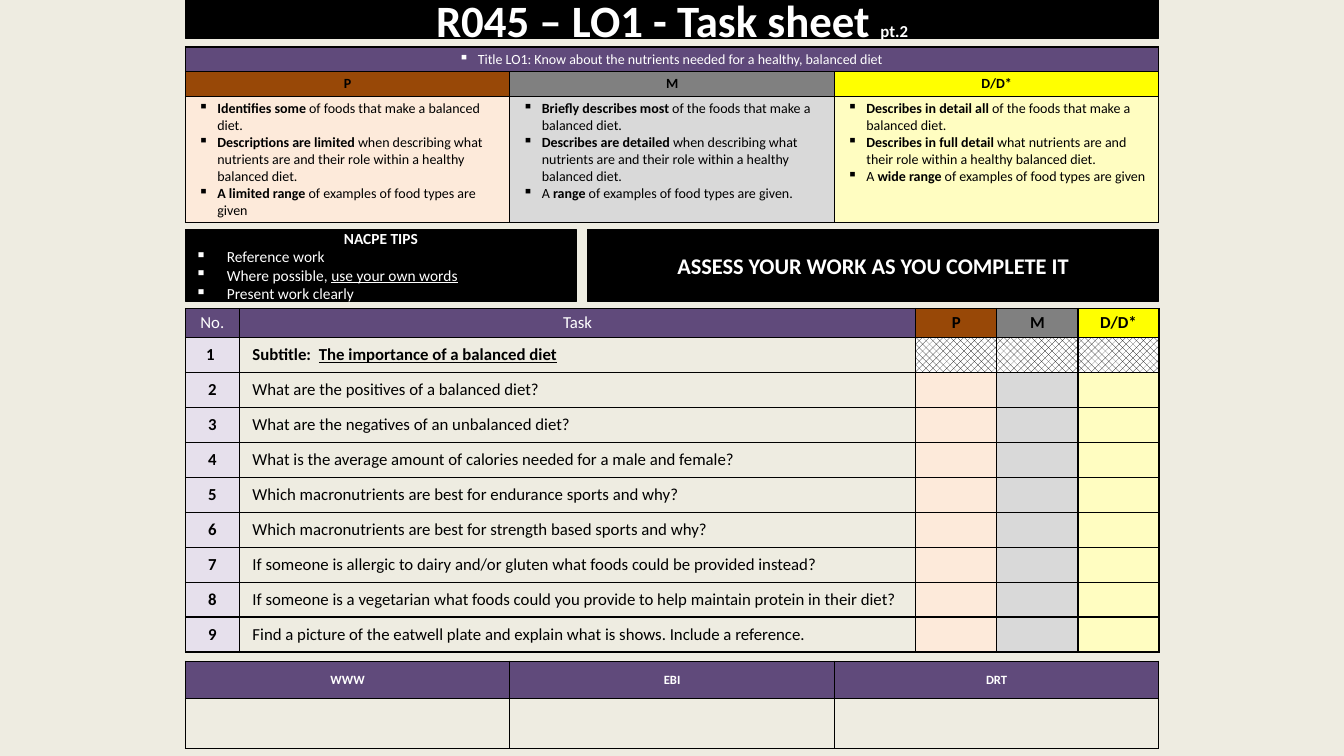
from lxml import etree
from pptx import Presentation
from pptx.dml.color import RGBColor
from pptx.enum.dml import MSO_PATTERN
from pptx.enum.shapes import MSO_SHAPE
from pptx.enum.text import MSO_ANCHOR, PP_ALIGN
from pptx.oxml.ns import qn
from pptx.util import Pt

LEFT, CENTER = PP_ALIGN.LEFT, PP_ALIGN.CENTER
TOP, MIDDLE = MSO_ANCHOR.TOP, MSO_ANCHOR.MIDDLE
RECTANGLE = MSO_SHAPE.RECTANGLE
HATCH = MSO_PATTERN.PERCENT_50

FONT = "Calibri"
COLORS = {
    "page": "EEECE1", "black": "000000", "white": "FFFFFF",
    "purple": "604A7B", "lilac": "E6E0EC",
    "brown": "984807", "gray": "808080", "yellow": "FFFF00",
    "peach": "FDEADA", "silver": "D9D9D9", "cream": "FFFDC1",
}
LEFT_EDGE = 132.4
GRADES = [("P", "brown", "peach"), ("M", "gray", "silver"), ("D/D*", "yellow", "cream")]
THIRDS = [231.8] * 3

# Each criterion is a plain lead, a bold phrase and a plain ending.
CRITERIA = [
    [("", "Identifies some ", "of foods that make a balanced diet."),
     ("", "Descriptions are limited ",
      "when describing what nutrients are and their role within a healthy balanced diet."),
     ("", "A limited range ", "of examples of food types are given")],
    [("", "Briefly describes most ", "of the foods that make a balanced diet."),
     ("", "Describes are detailed ",
      "when describing what nutrients are and their role within a healthy balanced diet."),
     ("A ", "range ", "of examples of food types are given.")],
    [("", "Describes in detail all ", "of the foods that make a balanced diet."),
     ("", "Describes in full detail ",
      "what nutrients are and their role within a healthy balanced diet."),
     ("A ", "wide range ", "of examples of food types are given")],
]
QUESTIONS = [
    "What are the positives of a balanced diet?",
    "What are the negatives of an unbalanced diet?",
    "What is the average amount of calories needed for a male and female?",
    "Which macronutrients are best for endurance sports and why?",
    "Which macronutrients are best for strength based sports and why?",
    "If someone is allergic to dairy and/or gluten what foods could be provided instead?",
    "If someone is a vegetarian what foods could you provide to help maintain protein in their diet?",
    "Find a picture of the eatwell plate and explain what is shows. Include a reference.",
]


def rgb(name):
    return RGBColor.from_string(COLORS[name])


def paint(fill, color):
    fill.solid()
    fill.fore_color.rgb = rgb(color)


def write(para, text, size, color="black", bold=None, align=LEFT, indent=0):
    """Fill a paragraph; an indent above zero gives it a hanging square bullet."""
    para.alignment = align
    font = para.font
    font.name, font.size, font.bold = FONT, Pt(size), bold
    font.color.rgb = rgb(color)
    if text:
        add_span(para, text)
    if indent:
        props = para._p.get_or_add_pPr()
        props.set("marL", str(Pt(indent)))
        props.set("indent", str(-Pt(indent)))
        bullet = etree.Element(qn("a:buChar"), char="▪")
        props.insert(0, bullet)


def add_span(para, text, bold=None, underline=None, size=None):
    span = para.add_run()
    span.text = text
    span.font.bold, span.font.underline = bold, underline
    if size:
        span.font.size = Pt(size)


def add_bar(page, left, top, width, height):
    """Add a black bar and return its text frame."""
    bar = page.shapes.add_shape(RECTANGLE, Pt(left), Pt(top), Pt(width), Pt(height))
    bar.shadow.inherit = False
    paint(bar.fill, "black")
    bar.line.color.rgb = rgb("black")
    bar.line.width = Pt(0.75)
    frame = bar.text_frame
    frame.word_wrap = True
    frame.vertical_anchor = MIDDLE
    return frame


def outline(cell):
    props = cell._tc.get_or_add_tcPr()
    for index, side in enumerate(("lnL", "lnR", "lnT", "lnB")):
        line = etree.Element(qn(f"a:{side}"), w=str(Pt(1)))
        fill = etree.SubElement(line, qn("a:solidFill"))
        etree.SubElement(fill, qn("a:srgbClr"), val=COLORS["black"])
        props.insert(index, line)


def add_grid(page, top, widths, heights):
    """Add a table of empty, outlined, unfilled cells."""
    frame = page.shapes.add_table(len(heights), len(widths), Pt(LEFT_EDGE), Pt(top),
                                  Pt(sum(widths)), Pt(sum(heights)))
    grid = frame.table
    grid.first_row = grid.horz_banding = False
    for column, width in zip(grid.columns, widths):
        column.width = Pt(width)
    for row, height in zip(grid.rows, heights):
        row.height = Pt(height)
    for cell in grid.iter_cells():
        cell.fill.background()
        cell.margin_top = cell.margin_bottom = 0
        outline(cell)
    return grid


def fill_cell(cell, text, size, fill=None, anchor=MIDDLE, **style):
    """Write a cell's first paragraph and return it."""
    cell.margin_left = cell.margin_right = Pt(9.36)
    cell.margin_top = cell.margin_bottom = Pt(2.7)
    cell.vertical_anchor = anchor
    if fill:
        paint(cell.fill, fill)
    para = cell.text_frame.paragraphs[0]
    write(para, text, size, **style)
    return para


def add_criteria(page):
    grid = add_grid(page, 33.6, THIRDS, [17.6, 17.6, 89.4])
    grid.cell(0, 0).merge(grid.cell(0, 2))
    fill_cell(grid.cell(0, 0),
              "Title LO1: Know about the nutrients needed for a healthy, balanced diet ",
              10, "purple", TOP, color="white", align=CENTER, indent=13.5)
    for column, ((grade, strong, pale), criteria) in enumerate(zip(GRADES, CRITERIA)):
        fill_cell(grid.cell(1, column), grade, 10, strong, TOP, bold=True, align=CENTER)
        cell = grid.cell(2, column)
        para = fill_cell(cell, "", 10, pale, TOP, indent=13.5)
        for index, (lead, phrase, ending) in enumerate(criteria):
            if index:
                para = cell.text_frame.add_paragraph()
                write(para, "", 10, indent=13.5)
            if lead:
                add_span(para, lead)
            add_span(para, phrase, bold=True)
            add_span(para, ending)


def add_tasks(page):
    grid = add_grid(page, 220.4, [38.6, 483.2] + [57.9] * 3, [20.6] + [25] * 9)
    for column, heading in enumerate(("No.", "Task")):
        fill_cell(grid.cell(0, column), heading, 12, "purple", color="white", align=CENTER)
    for column, (grade, strong, pale) in enumerate(GRADES, 2):
        fill_cell(grid.cell(0, column), grade, 12, strong, bold=True, align=CENTER)
        hatched = grid.cell(1, column).fill
        hatched.patterned()
        hatched.pattern = HATCH
        hatched.fore_color.rgb = rgb("black")
        hatched.back_color.rgb = rgb("white")
        for row in range(2, 10):
            paint(grid.cell(row, column).fill, pale)
    for row in range(1, 10):
        number = "1 " if row == 1 else str(row)
        fill_cell(grid.cell(row, 0), number, 12, "lilac", bold=True, align=CENTER)
    subtitle = fill_cell(grid.cell(1, 1), "Subtitle:  ", 12, bold=True)
    add_span(subtitle, "The importance of a balanced diet", underline=True)
    for row, question in enumerate(QUESTIONS, 2):
        fill_cell(grid.cell(row, 1), question, 12)


def add_feedback(page):
    grid = add_grid(page, 472.3, THIRDS, [26.6, 36])
    for column, heading in enumerate(("WWW", "EBI", "DRT")):
        fill_cell(grid.cell(0, column), heading, 9, "purple",
                  color="white", bold=True, align=CENTER)


def add_tips(page):
    frame = add_bar(page, LEFT_EDGE, 164.2, 279.4, 51)
    write(frame.paragraphs[0], "NACPE TIPS", 11, "white", bold=True, align=CENTER)
    for tip, underlined in (("Reference work", ""),
                            ("Where possible, ", "use your own words"),
                            ("Present work clearly", "")):
        para = frame.add_paragraph()
        write(para, tip, 11, "white", indent=22.5)
        if underlined:
            add_span(para, underlined, underline=True)


def main():
    deck = Presentation()
    deck.slide_width, deck.slide_height = Pt(960), Pt(540)
    page = deck.slides.add_slide(deck.slide_layouts[6])
    paint(page.background.fill, "page")

    add_criteria(page)
    add_tasks(page)
    add_tips(page)
    reminder = add_bar(page, 419.6, 164.2, 408.2, 51).paragraphs[0]
    write(reminder, "ASSESS YOUR WORK AS YOU COMPLETE IT", 16, "white", bold=True, align=CENTER)
    add_feedback(page)
    title = add_bar(page, LEFT_EDGE, 0, 695.4, 27.4).paragraphs[0]
    write(title, "R045 – LO1 - Task sheet ", 32, "white", bold=True, align=CENTER)
    add_span(title, "pt.2", size=12)

    deck.save("out.pptx")


if __name__ == "__main__":
    main()
